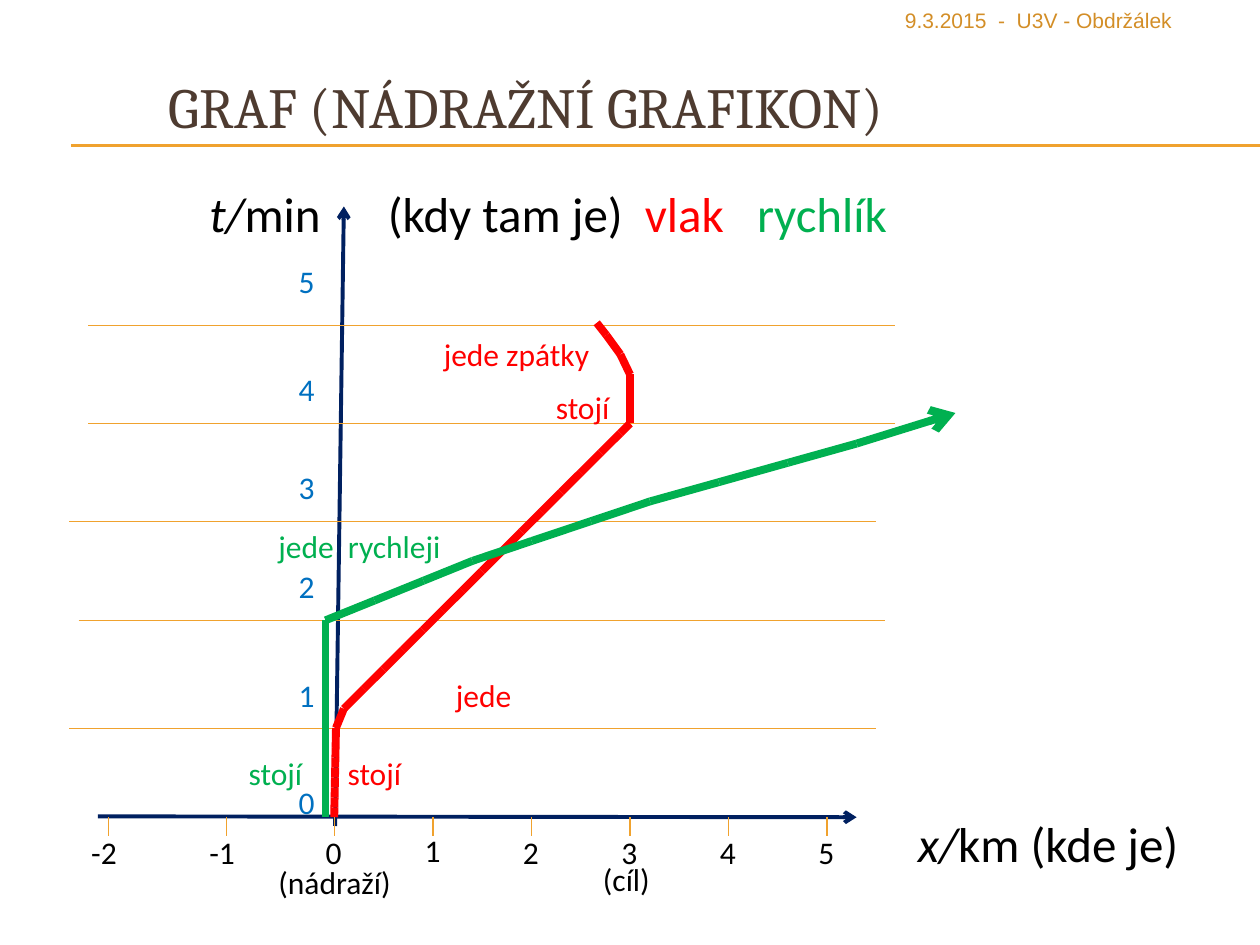
from pptx import Presentation
from pptx.dml.color import RGBColor
from pptx.enum import shapes, text
from pptx.oxml import ns
from pptx.util import Pt
from lxml import etree

BLACK = RGBColor(0x00, 0x00, 0x00)
BROWN = RGBColor(0x4E, 0x3B, 0x30)
OCHRE = RGBColor(0xD3, 0x8E, 0x27)
ORANGE = RGBColor(0xF0, 0xA2, 0x2E)
NAVY = RGBColor(0x00, 0x20, 0x60)
BLUE = RGBColor(0x00, 0x70, 0xC0)
RED = RGBColor(0xFF, 0x00, 0x00)
GREEN = RGBColor(0x00, 0xB0, 0x50)

deck = Presentation()
deck.slide_width, deck.slide_height = Pt(720), Pt(540)
slide = deck.slides.add_slide(deck.slide_layouts[6])


def draw_line(start, end, color, weight, arrow=False):
    line = slide.shapes.add_connector(
        shapes.MSO_CONNECTOR.STRAIGHT, *(Pt(v) for v in (*start, *end)))
    line.line.color.rgb = color
    line.line.width = Pt(weight)
    if arrow:
        etree.SubElement(line.line._get_or_add_ln(), ns.qn("a:tailEnd"), type="arrow")
    etree.SubElement(line._element.spPr, ns.qn("a:effectLst"))


def write(box, runs, size=18, font="Calibri", wrap=False):
    """Each run is (wording, colour) or (wording, colour, italic)."""
    label = slide.shapes.add_textbox(*(Pt(v) for v in box))
    label.text_frame.word_wrap = wrap
    paragraph = label.text_frame.paragraphs[0]
    for wording, color, *italic in runs:
        run = paragraph.add_run()
        run.text = wording
        run.font.size = Pt(size)
        run.font.name = font
        run.font.color.rgb = color
        run.font.italic = bool(italic)
    return label


# Title with its double rule
for rule_y in (82.8, 83.5):
    draw_line((40.5, rule_y), (720, rule_y), ORANGE, 0.75)
write((89.5, 37.5, 612, 39.5), [("GRAF (NÁDRAŽNÍ GRAFIKON)", BROWN)], 32.4, "Cambria", True)

# Axes and their captions
draw_line((56, 466.5), (489.5, 467), NAVY, 2.25, arrow=True)
write((517.5, 461.5, 168.5, 41), [("x/", BLACK, True), ("km (kde je)", BLACK)], 28, wrap=True)
draw_line((191.5, 472), (196.5, 118), NAVY, 2.25, arrow=True)
time_caption = write(
    (112.5, 101.5, 433.5, 41),
    [("t/", BLACK, True), ("min\t(kdy tam je)  ", BLACK), ("vlak\t", RED), ("rychlík", GREEN)],
    28, wrap=True)
caption_format = time_caption.text_frame.paragraphs[0]._p.get_or_add_pPr()
tab_stops = etree.SubElement(caption_format, ns.qn("a:tabLst"))
for stop in (102, 313):
    etree.SubElement(tab_stops, ns.qn("a:tab"), pos=str(Pt(stop)), algn="l")

# Kilometre ticks and numbers
tick_xs = [62, 129.5, 191] + [247.5 + 56.25 * step for step in range(5)]
for km, x in enumerate(tick_xs, start=-2):
    draw_line((x, 467), (x, 478), ORANGE, 0.79)
    indent, width = (17, 29.5) if km < 0 else (12, 24)
    write((x - indent, 471.5 if km == 1 else 472.5, width, 29), [(str(km), BLACK)])

# Minute guides and numbers
for left, y in ((39.5, 416), (45, 354.5), (39.5, 298), (50.5, 242), (50.5, 186)):
    draw_line((left, y), (left + 461, y), ORANGE, 0.5)
for minute, top in enumerate((444, 382.5, 320.5, 264, 208, 146)):
    write((163.5, top, 24, 29), [(str(minute), BLUE)])

# Journeys: start point, then legs (x, y, number of equal segments)
journeys = (
    (RED, False, (191, 467),
     ((192, 416, 9), (196.5, 405, 1), (354.5, 247.5, 14), (360, 242, 1), (360, 225, 1),
      (360, 214, 1), (354.5, 202.5, 1), (346.5, 191.5, 1), (341, 184.5, 1))),
    (GREEN, True, (186, 467),
     ((186, 416, 9), (186, 360, 5), (186, 354.5, 1), (270, 320.5, 3),
      (371.5, 286.5, 3), (489.5, 253.5, 3), (546, 236, 1))),
)
for color, continues, here, legs in journeys:
    for leg in legs:
        x, y, parts = leg
        dx, dy = (x - here[0]) / parts, (y - here[1]) / parts
        for part in range(parts):
            there = (here[0] + dx, here[1] + dy)
            draw_line(here, there, color, 4.5, arrow=continues and leg == legs[-1])
            here = there

# Notes on the stations and journeys
for left, top, width, wording, color in (
        (152, 489.5, 79, "(nádraží)", BLACK),
        (337.5, 488, 42, "(cíl)", BLACK),
        (191.5, 427.5, 45.5, "stojí", RED),
        (253.5, 382.5, 47, "jede", RED),
        (310.5, 218, 45.5, "stojí", RED),
        (246.5, 188, 98.5, "jede zpátky", RED),
        (135, 427.5, 45.5, "stojí", GREEN),
        (152, 297.5, 112.5, "jede  rychleji", GREEN)):
    write((left, top, width, 29), [(wording, color)])

# Date and lecturer
header = write((510, 0, 207.5, 23), [("9.3.2015  -  U3V - Obdržálek", OCHRE)], 12, "Arial", True)
header.text_frame.vertical_anchor = text.MSO_ANCHOR.MIDDLE

deck.save("out.pptx")
